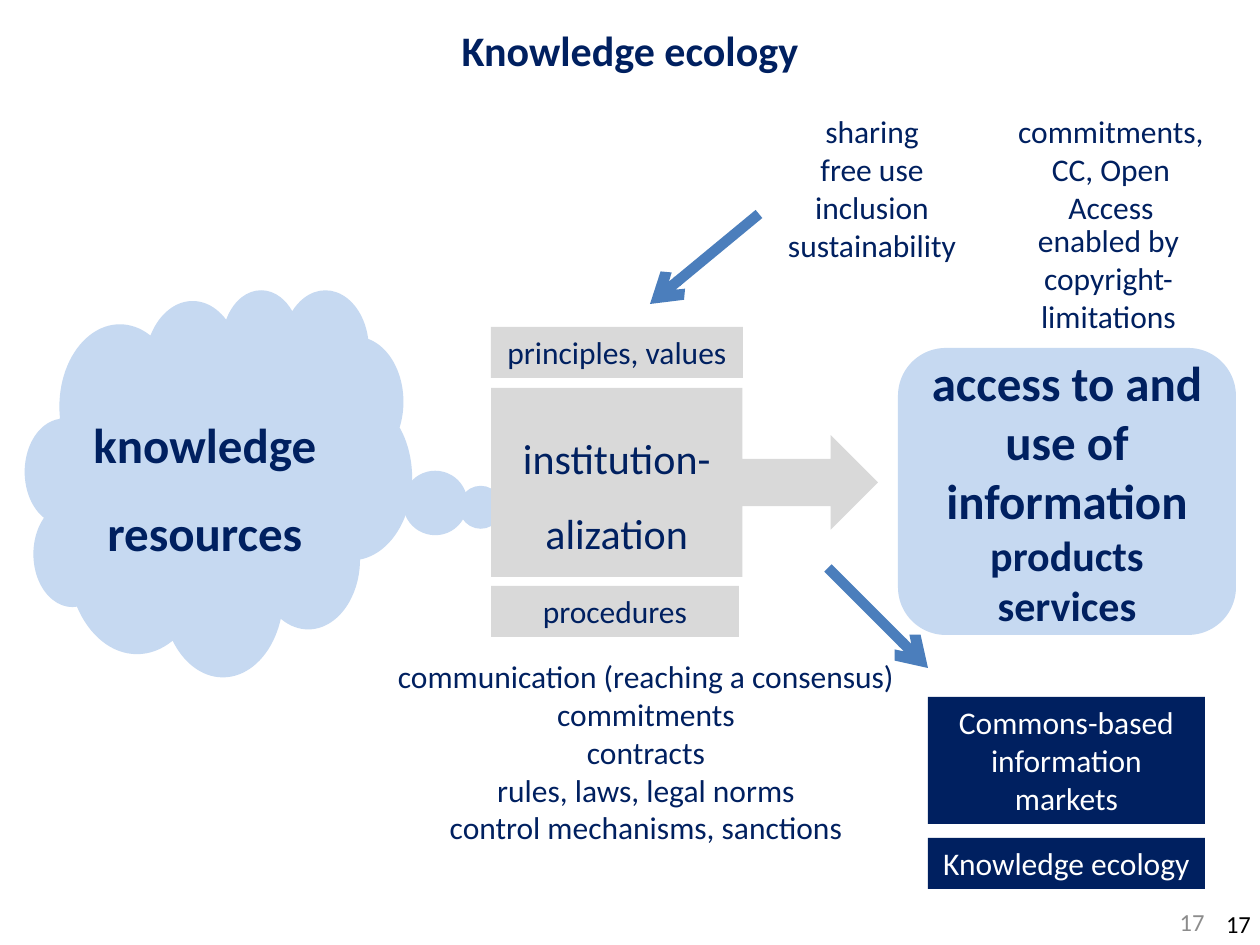
import dataclasses
import typing

import pptx
import pptx.dml.color
import pptx.enum.shapes
import pptx.enum.text
import pptx.oxml
import pptx.oxml.ns
import pptx.util

RGBColor = pptx.dml.color.RGBColor
Shape = pptx.enum.shapes.MSO_SHAPE
Align = pptx.enum.text.PP_ALIGN
Anchor = pptx.enum.text.MSO_ANCHOR

NAVY = RGBColor(0x00, 0x20, 0x60)
LIGHT_BLUE = RGBColor(0xC6, 0xD9, 0xF1)
ARROW_BLUE = RGBColor(0x4B, 0x7E, 0xBC)
LIGHT_GRAY = RGBColor(0xD9, 0xD9, 0xD9)
NUMBER_GRAY = RGBColor(0x8C, 0x8C, 0x8C)
WHITE = RGBColor(0xFF, 0xFF, 0xFF)
BLACK = RGBColor(0x00, 0x00, 0x00)

FONT = "Calibri"
EMU_PER_PX = 914400 / 126


@dataclasses.dataclass(frozen=True)
class Box:
    """Place in px, wording one paragraph a line, and look; no fill means a plain text box."""
    left: int
    top: int
    width: int
    height: int
    text: str
    size: int = 18
    color: RGBColor = NAVY
    fill: typing.Optional[RGBColor] = None
    preset: Shape = Shape.RECTANGLE
    adjustments: tuple[float, ...] = ()
    bold: bool = False
    align: Align = Align.CENTER
    anchor: Anchor = Anchor.TOP
    line_spacing: float = 1.0
    inset: bool = True
    small_tail: str = ""
    small_size: int = 24


@dataclasses.dataclass(frozen=True)
class Arrow:
    start: tuple[int, int]
    end: tuple[int, int]


TITLE = Box(0, 0, 1260, 100, "Knowledge ecology", 24, fill=WHITE, bold=True,
            anchor=Anchor.MIDDLE, inset=False)

BOXES = [
    Box(924, 897, 293, 50, "17", 14, NUMBER_GRAY, align=Align.RIGHT, anchor=Anchor.MIDDLE),
    Box(25, 289, 387, 387, "knowledge resources", 28, fill=LIGHT_BLUE,
        preset=Shape.CLOUD_CALLOUT, adjustments=(0.74, 0.07), bold=True,
        anchor=Anchor.MIDDLE, line_spacing=1.5),
    Box(491, 388, 387, 189, "institution-alization", 24, fill=LIGHT_GRAY,
        preset=Shape.RIGHT_ARROW_CALLOUT, anchor=Anchor.MIDDLE, line_spacing=1.5),
    Box(898, 348, 338, 287, "access to and use of information", 28, fill=LIGHT_BLUE,
        preset=Shape.ROUNDED_RECTANGLE, bold=True, anchor=Anchor.MIDDLE,
        small_tail=" products\nservices"),
    Box(491, 327, 252, 51, "principles, values", fill=LIGHT_GRAY),
    Box(491, 586, 248, 51, "procedures", fill=LIGHT_GRAY),
    Box(1165, 909, 86, 36, "17", 14, BLACK, align=Align.RIGHT, inset=False),
    Box(748, 106, 248, 165, "sharing\nfree use\ninclusion\nsustainability"),
    Box(353, 651, 586, 204, "communication (reaching a consensus)\ncommitments\ncontracts\n"
        "rules, laws, legal norms\ncontrol mechanisms, sanctions"),
    Box(928, 697, 277, 127, "Commons-based information markets", color=WHITE, fill=NAVY),
    Box(928, 838, 277, 51, "Knowledge ecology", color=WHITE, fill=NAVY),
    Box(1007, 215, 203, 127, "enabled by copyright-limitations"),
    Box(997, 106, 228, 127, "commitments, CC, Open Access"),
]

ARROWS = [Arrow((759, 214), (650, 304)), Arrow((828, 568), (928, 668))]


def px(length: int) -> pptx.util.Emu:
    return pptx.util.Emu(round(length * EMU_PER_PX))


def set_attributes(target: object, values: dict) -> None:
    for name, value in values.items():
        setattr(target, name, value)


def add_run(paragraph, text: str, size: int, box: Box) -> None:
    run = paragraph.add_run()
    run.text = text
    set_attributes(run.font, {"name": FONT, "size": pptx.util.Pt(size), "bold": box.bold})
    run.font.color.rgb = box.color


def add_paragraph(frame, box: Box, first: bool):
    paragraph = frame.paragraphs[0] if first else frame.add_paragraph()
    set_attributes(paragraph, {"alignment": box.align, "line_spacing": box.line_spacing})
    return paragraph


def write_text(shape, box: Box) -> None:
    frame = shape.text_frame
    set_attributes(frame, {"word_wrap": True, "vertical_anchor": box.anchor,
                           "auto_size": pptx.enum.text.MSO_AUTO_SIZE.NONE})
    if not box.inset:
        sides = ("left", "top", "right", "bottom")
        set_attributes(frame, {f"margin_{side}": 0 for side in sides})
    for index, line in enumerate(box.text.split("\n")):
        paragraph = add_paragraph(frame, box, index == 0)
        add_run(paragraph, line, box.size, box)
    if box.small_tail:
        ending, *lines = box.small_tail.split("\n")
        add_run(paragraph, ending, box.small_size, box)
        for line in lines:
            add_run(add_paragraph(frame, box, False), line, box.small_size, box)


def place_title(slide, box: Box) -> None:
    title = slide.shapes.title
    set_attributes(title, {name: px(getattr(box, name))
                           for name in ("left", "top", "width", "height")})
    title.fill.solid()
    title.fill.fore_color.rgb = box.fill
    write_text(title, box)


def add_box(slide, box: Box) -> None:
    bounds = [px(length) for length in (box.left, box.top, box.width, box.height)]
    if box.fill is None:
        shape = slide.shapes.add_textbox(*bounds)
    else:
        shape = slide.shapes.add_shape(box.preset, *bounds)
        shape.shadow.inherit = False
        shape.fill.solid()
        shape.fill.fore_color.rgb = box.fill
        shape.line.fill.background()
        for index, value in enumerate(box.adjustments):
            shape.adjustments[index] = value
    write_text(shape, box)


def add_arrow(slide, arrow: Arrow) -> None:
    ends = [px(length) for length in arrow.start + arrow.end]
    connector = slide.shapes.add_connector(pptx.enum.shapes.MSO_CONNECTOR.STRAIGHT, *ends)
    connector.line.width = pptx.util.Pt(6)
    connector.line.color.rgb = ARROW_BLUE
    namespace = pptx.oxml.ns.nsdecls("a")
    line = connector.line._get_or_add_ln()
    line.append(pptx.oxml.parse_xml(f'<a:tailEnd {namespace} type="arrow"/>'))
    properties = connector._element.spPr
    properties.append(pptx.oxml.parse_xml(f"<a:effectLst {namespace}/>"))


def main() -> None:
    presentation = pptx.Presentation()
    set_attributes(presentation, {"slide_width": px(1260), "slide_height": px(945)})
    slide = presentation.slides.add_slide(presentation.slide_layouts.get_by_name("Title Only"))
    place_title(slide, TITLE)
    for box in BOXES:
        add_box(slide, box)
    for arrow in ARROWS:
        add_arrow(slide, arrow)
    presentation.save("out.pptx")


if __name__ == "__main__":
    main()
